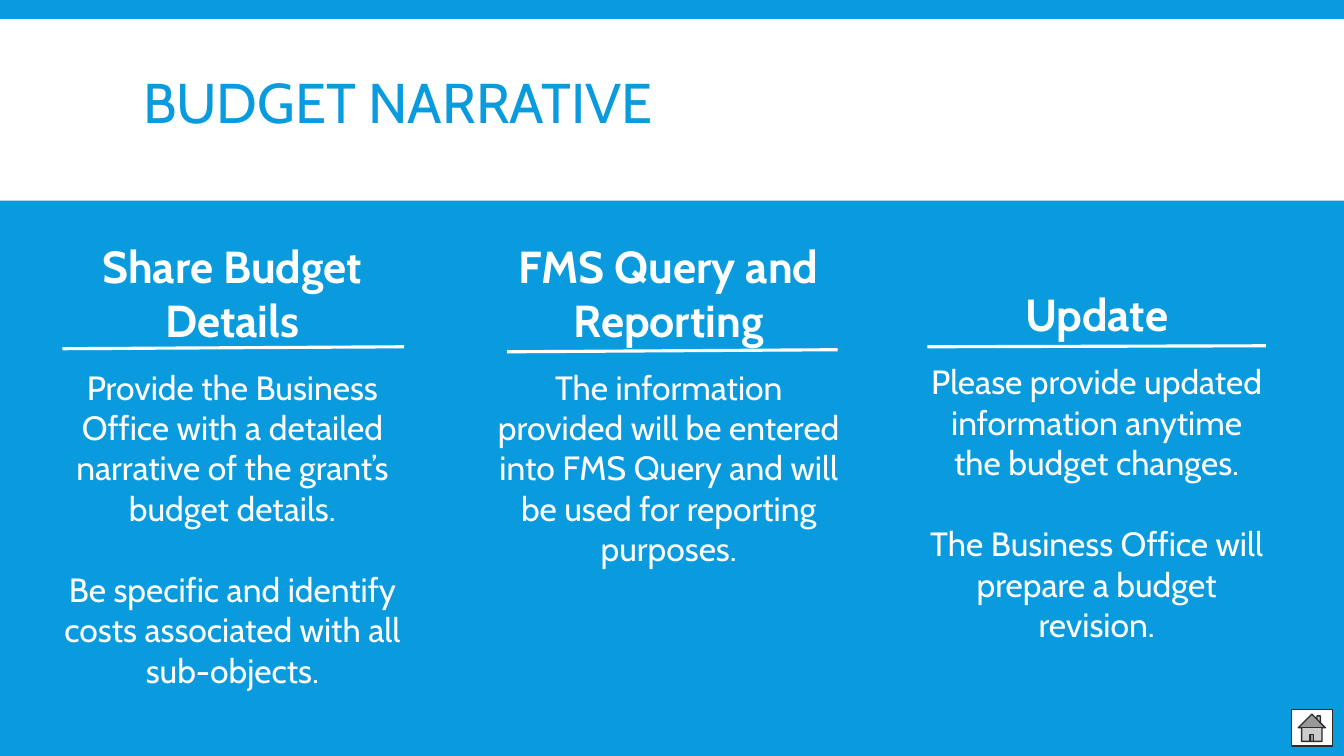
import pptx
import pptx.util
import pptx.dml.color
import pptx.enum.shapes
import pptx.enum.text
import pptx.oxml.ns
import lxml.etree

Pt = pptx.util.Pt
RGBColor = pptx.dml.color.RGBColor
ALIGN = pptx.enum.text.PP_ALIGN
ANCHOR = pptx.enum.text.MSO_ANCHOR
SHAPE = pptx.enum.shapes.MSO_SHAPE

BLUE = RGBColor(0x09, 0x9B, 0xDD)
WHITE = RGBColor(0xFF, 0xFF, 0xFF)
DARK = RGBColor(0x2C, 0x2C, 0x2C)
FONT = "Cabin"
HEADING_GAP = 14.6
BODY_GAP = 29.2

TITLE = "BUDGET NARRATIVE"
COLUMNS = [
    {
        "heading": "Share Budget Details",
        "body": [
            "Provide the Business Office with a detailed narrative of the grant’s budget details.",
            "Be specific and identify costs associated with all sub-objects.",
        ],
        "box": (28.1, 167, 275.8, 331.9),
        "rule": (44.6, 249.1, 288.7, 247.7),
    },
    {
        "heading": "FMS Query and Reporting",
        "body": [
            "The information provided will be entered into FMS Query and will be used "
            "for reporting purposes.",
        ],
        "box": (347, 167, 261.4, 244.8),
        "rule": (362.2, 251.3, 598.3, 249.8),
    },
    {
        "heading": "Update",
        "body": [
            "Please provide updated information anytime the budget changes.",
            "The Business Office will prepare a budget revision.",
        ],
        "box": (655.9, 201.6, 254.9, 264.2),
        "rule": (662.4, 247.7, 904.3, 247),
    },
]


def points(values):
    return [Pt(value) for value in values]


def write(para, text, size, color=WHITE, bold=False, align=ALIGN.CENTER, before=0, spacing=1.0):
    para.alignment = align
    para.space_before = Pt(before)
    para.line_spacing = spacing
    span = para.add_run()
    span.text = text
    span.font.name = FONT
    span.font.size = Pt(size)
    span.font.bold = bold
    span.font.color.rgb = color


def add_block(page, kind, place, line=None):
    block = page.shapes.add_shape(kind, *points(place))
    block.shadow.inherit = False
    block.fill.solid()
    block.fill.fore_color.rgb = WHITE
    if line is None:
        block.line.fill.background()
    else:
        block.line.color.rgb = line
        block.line.width = Pt(1)
    return block


def add_title(page):
    title = page.shapes.title
    title.left, title.top, title.width, title.height = points((95, 16.6, 770.4, 118.8))
    frame = title.text_frame
    frame.word_wrap = True
    frame.auto_size = pptx.enum.text.MSO_AUTO_SIZE.NONE
    frame.vertical_anchor = ANCHOR.MIDDLE
    write(frame.paragraphs[0], TITLE, 40, color=BLUE, align=ALIGN.LEFT, spacing=0.85)


def add_column(page, column):
    box = page.shapes.add_textbox(*points(column["box"]))
    frame = box.text_frame
    frame.word_wrap = True
    frame.auto_size = pptx.enum.text.MSO_AUTO_SIZE.SHAPE_TO_FIT_TEXT
    write(frame.paragraphs[0], column["heading"], 32, bold=True)
    for index, text in enumerate(column["body"]):
        write(frame.add_paragraph(), text, 24, before=BODY_GAP if index else HEADING_GAP)


def add_rule(page, ends):
    rule = page.shapes.add_connector(pptx.enum.shapes.MSO_CONNECTOR.STRAIGHT, *points(ends))
    rule.line.color.rgb = WHITE
    rule.line.width = Pt(2.25)
    lxml.etree.SubElement(rule._element.spPr, pptx.oxml.ns.qn("a:effectLst"))


def main():
    deck = pptx.Presentation()
    deck.slide_width, deck.slide_height = Pt(960), Pt(540)
    page = deck.slides.add_slide(deck.slide_layouts.get_by_name("Title Only"))
    page.background.fill.solid()
    page.background.fill.fore_color.rgb = BLUE

    band = add_block(page, SHAPE.RECTANGLE, (0, 13.7, 960, 129.7))
    page.shapes.title._element.addprevious(band._element)
    add_title(page)
    for column in COLUMNS:
        add_column(page, column)
    for column in COLUMNS:
        add_rule(page, column["rule"])
    add_block(page, SHAPE.ACTION_BUTTON_HOME, (922.3, 506.9, 29.5, 25.9), line=DARK)
    deck.save("out.pptx")


if __name__ == "__main__":
    main()
